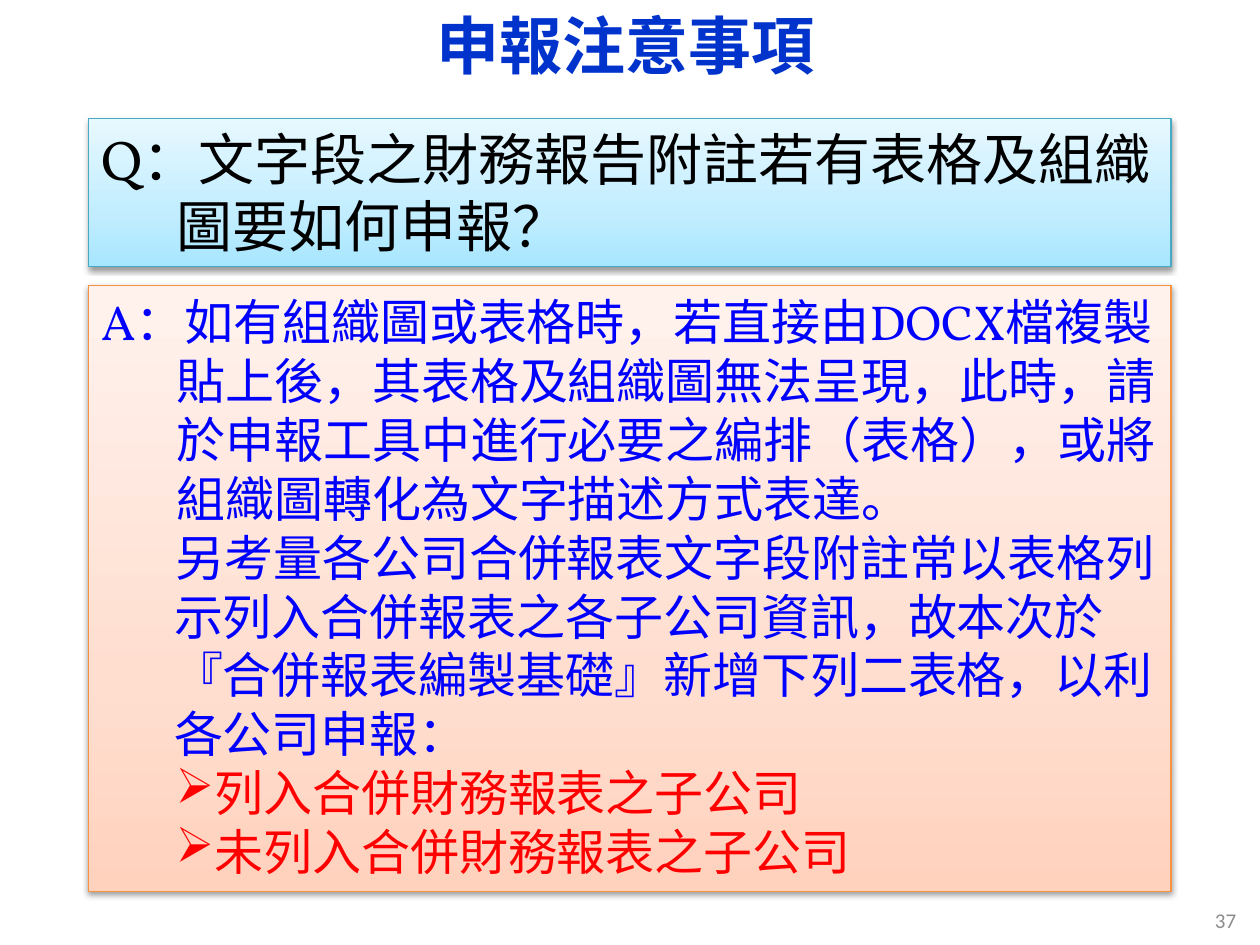
from copy import deepcopy
from dataclasses import dataclass

from lxml import etree
from pptx import Presentation
from pptx.dml.color import RGBColor as Rgb
from pptx.enum.shapes import MSO_SHAPE as Shape
from pptx.enum.text import MSO_ANCHOR as Anchor, MSO_AUTO_SIZE as AutoSize, PP_ALIGN as Align
from pptx.oxml.ns import qn
from pptx.util import Cm, Pt

COLORS = {
    "title": "0033CC", "number": "8C8C8C",
    "question": "000000", "answer": "0000FF", "list": "FF0000",
    "question_line": "46AAC5", "answer_line": "F69240", "shadow": "000000",
}
GRADIENTS = {
    "question": ("A7E6FF", "C1EDFF", "E7F8FF"),
    "answer": ("FFD2BD", "FFDED0", "FFF2ED"),
}
STOPS = (0, 0.35, 1)
CJK_FONT = "Noto Sans CJK SC"
BODY_FONT = "Vollkorn"
HANGING = (1.52, -1.52)
FLUSH = (1.47, 0.03)


@dataclass
class Line:
    text: str
    color: str
    size: int
    font: str = BODY_FONT
    bold: bool = False
    align: Align = Align.LEFT
    indent: tuple[float, float] = (0, 0)
    bullet: str = ""


@dataclass
class Panel:
    kind: str
    top: float
    height: float
    lines: list[Line]


def write_lines(frame, lines: list[Line]) -> None:
    frame.word_wrap = True
    for i, line in enumerate(lines):
        para = frame.paragraphs[0] if i == 0 else frame.add_paragraph()
        para.text = line.text
        para.alignment = line.align
        props = para._p.get_or_add_pPr()
        margin, first = line.indent
        props.set("marL", str(Cm(margin)))
        props.set("indent", str(Cm(first)))
        if line.bullet:
            etree.SubElement(props, qn("a:buChar"), char=line.bullet)
        font = para.font
        font.name, font.size, font.bold = line.font, Pt(line.size), line.bold
        font.color.rgb = Rgb.from_string(COLORS[line.color])
        # East Asian glyphs take their own typeface
        latin = props.find(qn("a:defRPr")).find(qn("a:latin"))
        latin.addnext(etree.Element(qn("a:ea"), typeface=CJK_FONT))


def add_label(slide, left: float, top: float, width: float, height: float, line: Line) -> None:
    label = slide.shapes.add_textbox(Cm(left), Cm(top), Cm(width), Cm(height))
    label.text_frame.vertical_anchor = Anchor.MIDDLE
    write_lines(label.text_frame, [line])


def fill_gradient(fill, colors: tuple[str, ...]) -> None:
    fill.gradient()
    fill.gradient_angle = 90
    last = fill._fill._gradFill.find(qn("a:gsLst"))[-1]
    last.addnext(deepcopy(last))
    for stop, position, color in zip(fill.gradient_stops, STOPS, colors):
        stop.position = position
        stop.color.rgb = Rgb.from_string(color)


def add_shadow(box) -> None:
    box.shadow.inherit = False
    effects = box._element.spPr.find(qn("a:effectLst"))
    shadow = etree.SubElement(effects, qn("a:outerShdw"), blurRad=str(Pt(3.1)),
                              dist=str(Pt(1.6)), dir="5400000", rotWithShape="0")
    color = etree.SubElement(shadow, qn("a:srgbClr"), val=COLORS["shadow"])
    etree.SubElement(color, qn("a:alpha"), val="38000")


def add_panel(slide, panel: Panel) -> None:
    box = slide.shapes.add_shape(Shape.RECTANGLE, Cm(1.79), Cm(panel.top),
                                 Cm(21.82), Cm(panel.height))
    fill_gradient(box.fill, GRADIENTS[panel.kind])
    box.line.color.rgb = Rgb.from_string(COLORS[panel.kind + "_line"])
    box.line.width = Pt(0.75)
    add_shadow(box)
    box.text_frame.vertical_anchor = Anchor.TOP
    box.text_frame.auto_size = AutoSize.SHAPE_TO_FIT_TEXT
    write_lines(box.text_frame, panel.lines)


PANELS = [
    Panel("question", 2.39, 2.99, [
        Line("Q：文字段之財務報告附註若有表格及組織圖要如何申報？",
             "question", 32, indent=HANGING),
    ]),
    Panel("answer", 5.76, 12.22, [
        Line("A：如有組織圖或表格時，若直接由DOCX檔複製貼上後，其表格及組織圖無法呈現，"
             "此時，請於申報工具中進行必要之編排（表格），或將組織圖轉化為文字描述方式表達。",
             "answer", 28, indent=HANGING),
        Line("另考量各公司合併報表文字段附註常以表格列示列入合併報表之各子公司資訊，"
             "故本次於『合併報表編製基礎』新增下列二表格，以利各公司申報：",
             "answer", 28, indent=FLUSH),
        *(Line(item, "list", 28, indent=FLUSH, bullet="➢")
          for item in ("列入合併財務報表之子公司", "未列入合併財務報表之子公司")),
    ]),
]


def main() -> None:
    deck = Presentation()
    deck.slide_width, deck.slide_height = Cm(25.4), Cm(19.05)
    slide = deck.slides.add_slide(deck.slide_layouts[6])

    # Page number and title
    add_label(slide, 19.25, 18.03, 5.92, 1.02,
              Line("37", "number", 12, "Calibri", align=Align.RIGHT))
    add_label(slide, 1.19, 0.18, 22.86, 1.42,
              Line("申報注意事項", "title", 36, CJK_FONT, True, Align.CENTER))

    # Question and answer
    for panel in PANELS:
        add_panel(slide, panel)

    deck.save("out.pptx")


if __name__ == "__main__":
    main()
